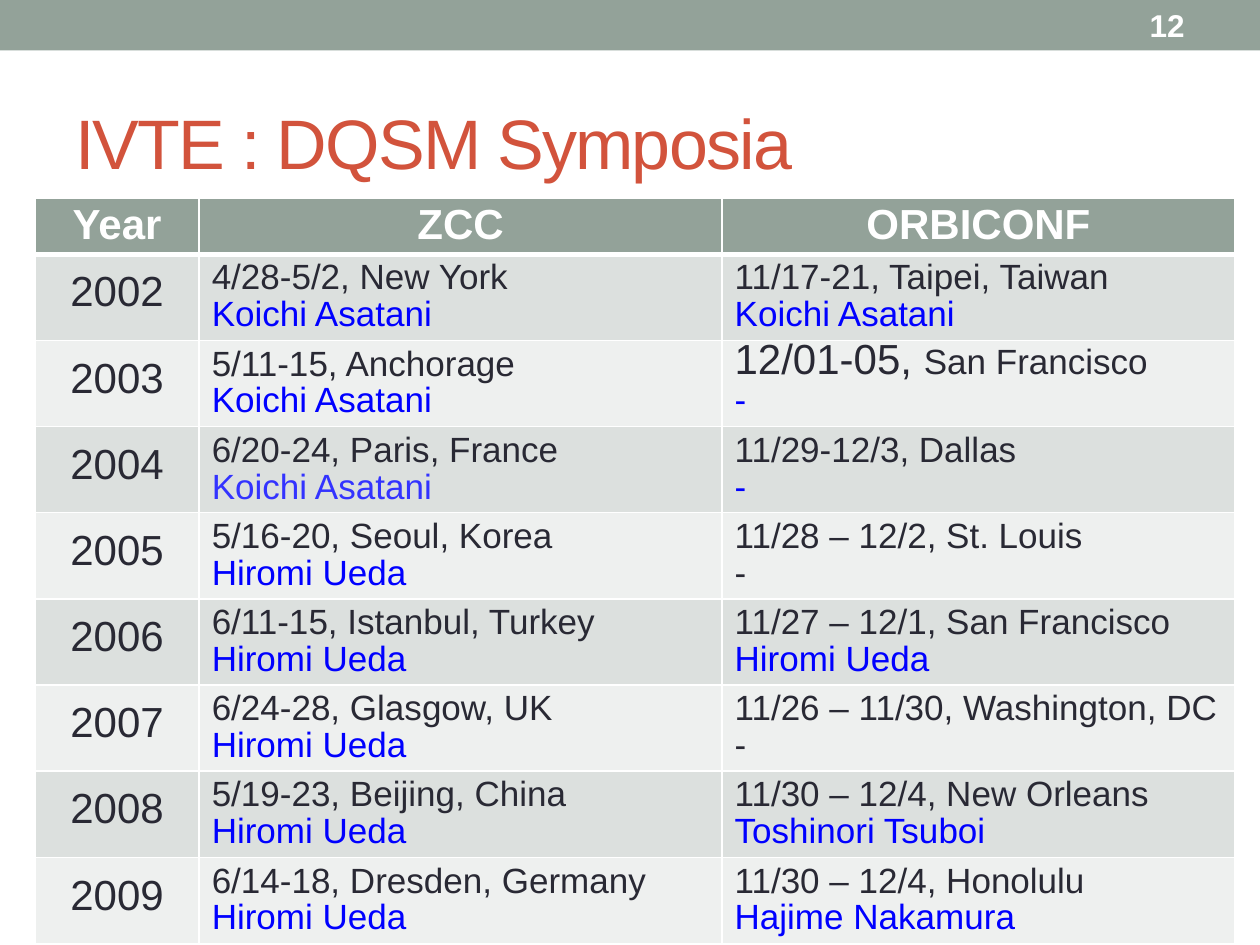
"""Build the slide listing the DQSM symposia by year."""
from lxml.etree import SubElement
from pptx import Presentation
from pptx.dml.color import RGBColor
from pptx.enum.shapes import MSO_SHAPE as Shape
from pptx.enum.text import MSO_ANCHOR as Anchor, PP_ALIGN as Align
from pptx.oxml.ns import qn
from pptx.util import Pt

SAGE = RGBColor(0x93, 0xA2, 0x99)
RUST = RGBColor(0xD2, 0x53, 0x3C)
WHITE = RGBColor(0xFF, 0xFF, 0xFF)
DARK = RGBColor(0x29, 0x29, 0x34)
BLUE = RGBColor(0x00, 0x00, 0xFF)
SOFT_BLUE = RGBColor(0x33, 0x33, 0xFF)
BANDS = (RGBColor(0xDC, 0xE0, 0xDE), RGBColor(0xEE, 0xF0, 0xEF))

TITLE = "IVTE : DQSM Symposia"
NUMBER = "12"
HEADERS = ("Year", "ZCC", "ORBICONF")
SYMPOSIA = [
    ("2002", ("4/28-5/2, New York", "Koichi Asatani"),
     ("11/17-21, Taipei, Taiwan", "Koichi Asatani")),
    ("2003", ("5/11-15, Anchorage", "Koichi Asatani"),
     ("12/01-05, San Francisco", "-")),
    ("2004", ("6/20-24, Paris, France", "Koichi Asatani"),
     ("11/29-12/3, Dallas", "-")),
    ("2005", ("5/16-20, Seoul, Korea", "Hiromi Ueda"),
     ("11/28 – 12/2, St. Louis", "-")),
    ("2006", ("6/11-15, Istanbul, Turkey", "Hiromi Ueda"),
     ("11/27 – 12/1, San Francisco", "Hiromi Ueda")),
    ("2007", ("6/24-28, Glasgow, UK", "Hiromi Ueda"),
     ("11/26 – 11/30, Washington, DC", "-")),
    ("2008", ("5/19-23, Beijing, China", "Hiromi Ueda"),
     ("11/30 – 12/4, New Orleans", "Toshinori Tsuboi")),
    ("2009", ("6/14-18, Dresden, Germany", "Hiromi Ueda"),
     ("11/30 – 12/4, Honolulu", "Hajime Nakamura")),
]
CHAIR_COLORS = {("2004", "ZCC"): SOFT_BLUE, ("2005", "ORBICONF"): DARK,
                ("2007", "ORBICONF"): DARK}
LARGE_DATES = {"12/01-05, "}

COLUMN_WIDTHS = (93.8, 298.8, 293)
HEADER_HEIGHT, ROW_HEIGHT = 32, 49.2
LINE_SPACING = 21


def write(paragraph, text, size=20, color=DARK, bold=False, align=Align.LEFT,
          leading=None, tracking=0):
    paragraph.alignment = align
    if leading:
        paragraph.line_spacing = Pt(leading)
    run = paragraph.add_run()
    run.text = text
    run.font.name = "Arial"
    run.font.size = Pt(size)
    run.font.bold = bold
    run.font.color.rgb = color
    if tracking:
        run.font._element.set("spc", str(tracking * 100))


def add_text(slide, text, left, top, width, height, **text_format):
    frame = slide.shapes.add_textbox(Pt(left), Pt(top), Pt(width), Pt(height)).text_frame
    frame.word_wrap = True
    frame.vertical_anchor = Anchor.MIDDLE
    write(frame.paragraphs[0], text, **text_format)


def style_cell(cell, fill, anchor, top=1, bottom=1):
    cell.vertical_anchor = anchor
    properties = cell._tc.get_or_add_tcPr()
    for side, width in (("L", 1), ("R", 1), ("T", top), ("B", bottom)):
        line = SubElement(properties, qn(f"a:ln{side}"), w=str(Pt(width)))
        solid = SubElement(line, qn("a:solidFill"))
        SubElement(solid, qn("a:srgbClr"), val=str(WHITE))
    cell.fill.solid()
    cell.fill.fore_color.rgb = fill


def write_event(cell, date, chair, chair_color):
    first = cell.text_frame.paragraphs[0]
    for prefix in LARGE_DATES:
        if date.startswith(prefix):
            write(first, prefix, size=24, leading=LINE_SPACING)
            date = date.removeprefix(prefix)
    write(first, date, leading=LINE_SPACING)
    write(cell.text_frame.add_paragraph(), chair, color=chair_color, leading=LINE_SPACING)


def add_symposia(slide):
    height = HEADER_HEIGHT + ROW_HEIGHT * len(SYMPOSIA)
    table = slide.shapes.add_table(
        len(SYMPOSIA) + 1, len(HEADERS), Pt(20), Pt(113.3),
        Pt(sum(COLUMN_WIDTHS)), Pt(height)).table
    for column, width in zip(table.columns, COLUMN_WIDTHS):
        column.width = Pt(width)
    for index, row in enumerate(table.rows):
        row.height = Pt(ROW_HEIGHT if index else HEADER_HEIGHT)
    centred = dict(size=24, align=Align.CENTER, leading=LINE_SPACING)
    for column, header in enumerate(HEADERS):
        cell = table.cell(0, column)
        style_cell(cell, SAGE, Anchor.BOTTOM, bottom=3)
        write(cell.text_frame.paragraphs[0], header, color=WHITE, bold=True, **centred)
    for index, (year, *events) in enumerate(SYMPOSIA):
        cells = table.rows[index + 1].cells
        for cell in cells:
            style_cell(cell, BANDS[index % 2], Anchor.MIDDLE, top=1 if index else 3)
        write(cells[0].text_frame.paragraphs[0], year, **centred)
        for column, (date, chair) in enumerate(events, start=1):
            color = CHAIR_COLORS.get((year, HEADERS[column]), BLUE)
            write_event(cells[column], date, chair, color)


def main():
    presentation = Presentation()
    presentation.slide_width, presentation.slide_height = Pt(720), Pt(540)
    slide = presentation.slides.add_slide(presentation.slide_layouts[6])
    banner = slide.shapes.add_shape(Shape.RECTANGLE, 0, 0, Pt(720), Pt(28.8))
    banner.shadow.inherit = False
    banner.fill.solid()
    banner.fill.fore_color.rgb = SAGE
    banner.line.fill.background()
    add_text(slide, TITLE, 36, 42, 648, 78, size=40, color=RUST, tracking=-1)
    add_text(slide, NUMBER, 600, 1.5, 84, 26, size=18, color=WHITE, bold=True,
             align=Align.RIGHT)
    add_symposia(slide)
    presentation.save("out.pptx")


if __name__ == "__main__":
    main()
